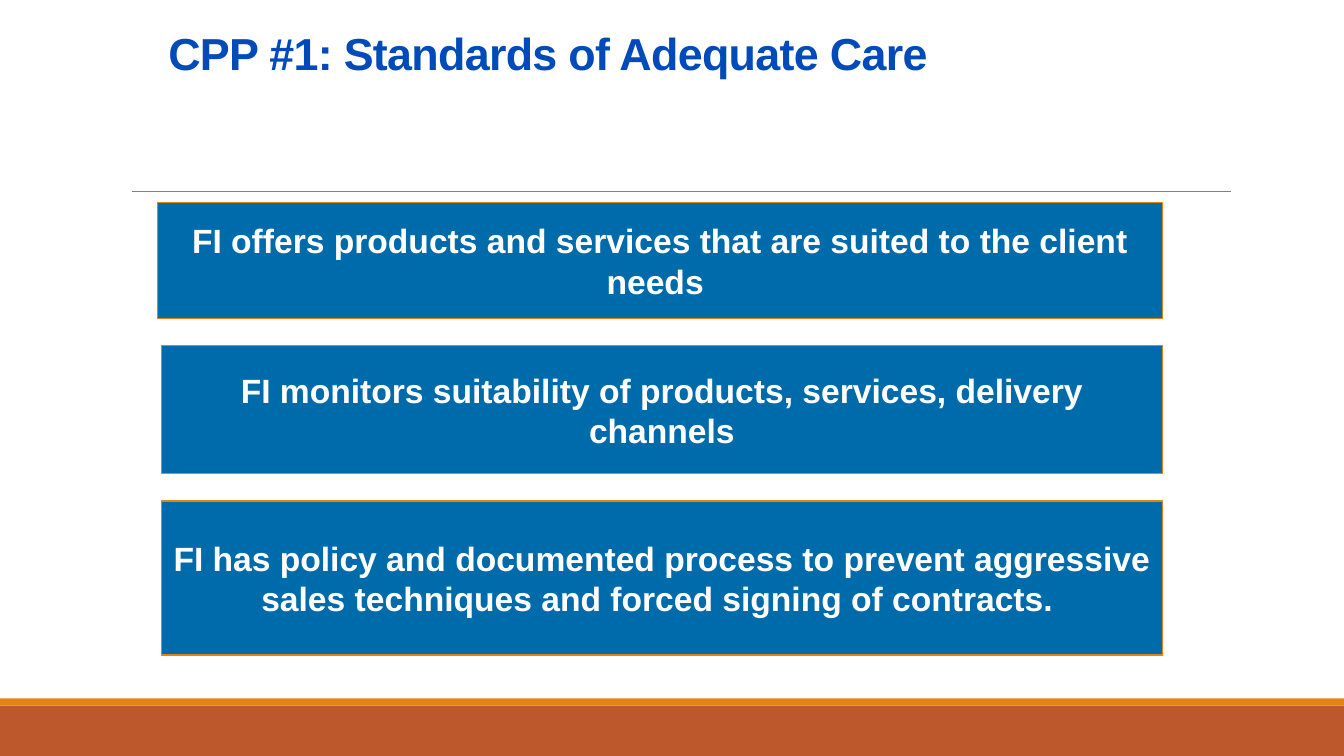
from dataclasses import dataclass

from pptx import Presentation
from pptx.dml.color import RGBColor
from pptx.enum.shapes import MSO_CONNECTOR, MSO_SHAPE
from pptx.enum.text import MSO_ANCHOR, MSO_AUTO_SIZE, PP_ALIGN
from pptx.oxml.ns import qn
from pptx.util import Inches, Pt

HEADING = "CPP #1: Standards of Adequate Care"
STANDARDS = [
    ("FI offers products and services that are suited to the client needs ", 1.56, 2.01, 1.15),
    ("FI monitors suitability of products, services, delivery channels", 1.6, 3.43, 1.27),
    ("FI has policy and documented process to prevent aggressive sales techniques "
     "and forced signing of contracts. ", 1.6, 4.97, 1.53),
]
STANDARDS_RIGHT = 11.53
SLIDE_WIDTH, SLIDE_HEIGHT = 13.33, 7.5
FOOTER_TOP, ACCENT_HEIGHT = 7, 0.07


@dataclass(frozen=True)
class Theme:
    font: str = "Arial"
    heading_size: float = 32
    standard_size: float = 24
    heading: str = "004ABA"
    panel: str = "006BAA"
    panel_text: str = "FFFFFF"
    accent: str = "E48312"
    footer: str = "BD582C"
    rule: str = "808080"


THEME = Theme()


def color(value):
    return RGBColor.from_string(value)


def add_rectangle(slide, left, top, width, height, fill, outline=None):
    rectangle = slide.shapes.add_shape(
        MSO_SHAPE.RECTANGLE, Inches(left), Inches(top), Inches(width), Inches(height))
    rectangle.shadow.inherit = False
    rectangle.fill.solid()
    rectangle.fill.fore_color.rgb = color(fill)
    if outline:
        rectangle.line.color.rgb = color(outline)
        rectangle.line.width = Pt(1)
    else:
        rectangle.line.fill.background()
    return rectangle


def write(frame, text, size, text_color, anchor):
    frame.word_wrap = True
    frame.auto_size = MSO_AUTO_SIZE.NONE
    frame.vertical_anchor = anchor
    paragraph = frame.paragraphs[0]
    paragraph.text = text
    paragraph.alignment = PP_ALIGN.CENTER
    paragraph.font.name = THEME.font
    paragraph.font.size = Pt(size)
    paragraph.font.bold = True
    paragraph.font.color.rgb = color(text_color)
    return paragraph


def add_rule(slide):
    rule = slide.shapes.add_connector(
        MSO_CONNECTOR.STRAIGHT, Inches(1.31), Inches(1.9), Inches(12.21), Inches(1.9))
    rule.line.color.rgb = color(THEME.rule)
    rule.line.width = Pt(0.5)
    properties = rule._element.spPr
    properties.append(properties.makeelement(qn("a:effectLst"), {}))


def add_heading(slide):
    title = slide.shapes.title
    title.left, title.top = Inches(0), Inches(0.29)
    title.width, title.height = Inches(10.87), Inches(1.45)
    paragraph = write(title.text_frame, HEADING, THEME.heading_size, THEME.heading, MSO_ANCHOR.TOP)
    paragraph.line_spacing = 0.85
    paragraph.runs[0]._r.get_or_add_rPr().set("spc", "-50")


def main():
    presentation = Presentation()
    presentation.slide_width = Inches(SLIDE_WIDTH)
    presentation.slide_height = Inches(SLIDE_HEIGHT)
    slide = presentation.slides.add_slide(presentation.slide_layouts[5])

    add_rectangle(slide, 0, FOOTER_TOP, SLIDE_WIDTH, SLIDE_HEIGHT - FOOTER_TOP, THEME.footer)
    add_rectangle(slide, 0, FOOTER_TOP - ACCENT_HEIGHT, SLIDE_WIDTH, ACCENT_HEIGHT, THEME.accent)
    add_rule(slide)
    add_heading(slide)
    for text, left, top, height in STANDARDS:
        panel = add_rectangle(
            slide, left, top, STANDARDS_RIGHT - left, height, THEME.panel, THEME.accent)
        write(panel.text_frame, text, THEME.standard_size, THEME.panel_text, MSO_ANCHOR.MIDDLE)

    presentation.save("out.pptx")


if __name__ == "__main__":
    main()
